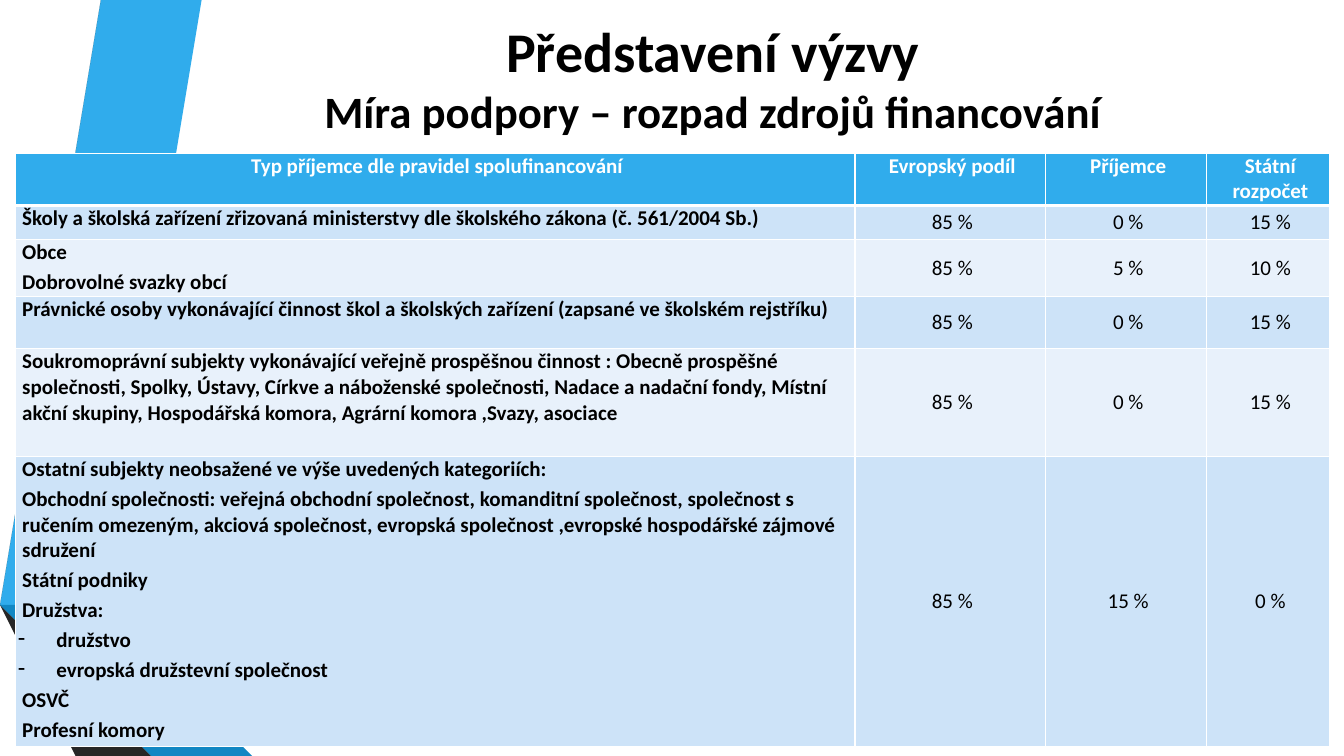
from dataclasses import dataclass

import lxml.etree
import pptx
import pptx.dml.color
import pptx.enum.text
import pptx.oxml
import pptx.oxml.ns
import pptx.slide
import pptx.table
import pptx.util

COLORS = {
    "blue": "30ACEC", "blue_mid": "1287C3", "blue_dark": "0C5A82",
    "gray": "595959", "gray_mid": "404040", "gray_dark": "262626",
    "band_dark": "CDE3F8", "band_light": "E8F1FB",
    "black": "000000", "white": "FFFFFF",
}
FONT = "Calibri"
Inches = pptx.util.Inches
Pt = pptx.util.Pt
ALIGN = pptx.enum.text.PP_ALIGN
ANCHOR = pptx.enum.text.MSO_ANCHOR


@dataclass
class Ribbon:
    color: str
    points: list[tuple[float, float]]


@dataclass
class Recipient:
    height: float
    lines: list[str]
    shares: tuple[str, str, str]


RIBBONS = [
    Ribbon("blue", [(0.5, 5.78), (0.77, 5.83), (1.73, 0), (1.45, 0)]),
    Ribbon("gray", [(1.39, 0), (1.11, 0), (0.16, 5.73), (0.44, 5.77)]),
    Ribbon("gray_dark", [(0.16, 5.73), (1.45, 7.5), (1.51, 7.5)]),
    Ribbon("blue_dark", [(0.5, 5.79), (2.08, 7.5), (2.14, 7.5)]),
    Ribbon("blue_mid", [(0.5, 5.79), (2.14, 7.5), (2.83, 7.5), (0.77, 5.83), (0.5, 5.78)]),
    Ribbon("gray_mid", [(2.02, 7.5), (0.48, 5.83), (0.44, 5.77), (0.16, 5.73), (1.51, 7.5)]),
]

TITLE_LINES = [("Představení výzvy", 40), ("Míra podpory – rozpad zdrojů financování", 32)]

COLUMNS = [
    ("Typ příjemce dle pravidel spolufinancování", 8.33),
    ("Evropský podíl", 1.89),
    ("Příjemce", 1.6),
    ("Státní rozpočet", 1.22),
]
HEADER_HEIGHT = 0.52
BULLET = "- "

RECIPIENTS = [
    Recipient(0.34, ["Školy a školská zařízení zřizovaná ministerstvy dle školského zákona "
                     "(č. 561/2004 Sb.)"], ("85 %", "0 %", "15 %")),
    Recipient(0.56, ["Obce", "Dobrovolné svazky obcí"], ("85 %", "5 %", "10 %")),
    Recipient(0.52, ["Právnické osoby vykonávající činnost škol a školských zařízení "
                     "(zapsané ve školském rejstříku)"], ("85 %", "0 %", "15 %")),
    Recipient(1.07, ["Soukromoprávní subjekty vykonávající veřejně prospěšnou činnost : "
                     "Obecně prospěšné společnosti, Spolky, Ústavy, Církve a náboženské "
                     "společnosti, Nadace a nadační fondy, Místní akční skupiny, "
                     "Hospodářská komora, Agrární komora ,Svazy, asociace"],
              ("85 %", "0 %", "15 %")),
    Recipient(2.88, ["Ostatní subjekty neobsažené ve výše uvedených kategoriích:",
                     "Obchodní společnosti: veřejná obchodní společnost, komanditní "
                     "společnost, společnost s ručením omezeným, akciová společnost, "
                     "evropská společnost ,evropské hospodářské zájmové sdružení",
                     "Státní podniky", "Družstva:",
                     BULLET + "družstvo", BULLET + "evropská družstevní společnost",
                     "OSVČ", "Profesní komory"], ("85 %", "15 %", "0 %")),
]


def rgb(name: str) -> pptx.dml.color.RGBColor:
    return pptx.dml.color.RGBColor.from_string(COLORS[name])


def draw_ribbon(slide: pptx.slide.Slide, ribbon: Ribbon) -> None:
    start, *rest = ribbon.points
    builder = slide.shapes.build_freeform(*start, scale=Inches(1))
    builder.add_line_segments(rest, close=True)
    stripe = builder.convert_to_shape()
    stripe.shadow.inherit = False
    stripe.fill.solid()
    stripe.fill.fore_color.rgb = rgb(ribbon.color)
    stripe.line.fill.background()


def format_run(run, size: float, color: str, bold: bool) -> None:
    run.font.name = FONT
    run.font.size = Pt(size)
    run.font.bold = bold
    run.font.color.rgb = rgb(color)


def draw_title(slide: pptx.slide.Slide) -> None:
    title = slide.shapes.title
    title.left, title.top = Inches(1.59), Inches(0)
    title.width, title.height = Inches(10.96), Inches(1.52)
    frame = title.text_frame
    frame.auto_size = pptx.enum.text.MSO_AUTO_SIZE.NONE
    frame.word_wrap = True
    frame.vertical_anchor = ANCHOR.MIDDLE
    # A vertical tab becomes a line break inside the paragraph
    frame.text = "\v".join(text for text, _ in TITLE_LINES)
    heading = frame.paragraphs[0]
    heading.alignment = ALIGN.CENTER
    for run, (_, size) in zip(heading.runs, TITLE_LINES):
        format_run(run, size, "black", True)


def set_borders(cell: pptx.table._Cell, top: float, bottom: float) -> None:
    properties = cell._tc.get_or_add_tcPr()
    for side, width in (("L", 1), ("R", 1), ("T", top), ("B", bottom)):
        properties.append(pptx.oxml.parse_xml(
            f'<a:ln{side} {pptx.oxml.ns.nsdecls("a")} w="{Pt(width)}"><a:solidFill>'
            f'<a:srgbClr val="{COLORS["white"]}"/></a:solidFill></a:ln{side}>'))


def fill_cell(cell: pptx.table._Cell, lines: list[str], fill: str, color: str,
              bold: bool, centered: bool, anchor: ANCHOR) -> None:
    cell.margin_left = cell.margin_right = Inches(0.03)
    cell.margin_top = cell.margin_bottom = 0
    cell.vertical_anchor = anchor
    cell.fill.solid()
    cell.fill.fore_color.rgb = rgb(fill)
    cell.text_frame.text = "\n".join(line.removeprefix(BULLET) for line in lines)
    for paragraph, line in zip(cell.text_frame.paragraphs, lines):
        paragraph.alignment = ALIGN.CENTER if centered else ALIGN.LEFT
        paragraph.space_before = Pt(3)
        bulleted = line.startswith(BULLET)
        layout = paragraph._p.get_or_add_pPr()
        layout.set("marL", str(Inches(0.38 if bulleted else 0.04)))
        layout.set("indent", str(Inches(-0.38 if bulleted else 0)))
        if bulleted:
            mark = lxml.etree.SubElement(layout, pptx.oxml.ns.qn("a:buChar"))
            mark.set("char", BULLET.strip())
        for run in paragraph.runs:
            format_run(run, 15, color, bold)


def draw_funding_table(slide: pptx.slide.Slide) -> None:
    heights = [HEADER_HEIGHT] + [recipient.height for recipient in RECIPIENTS]
    widths = [width for _, width in COLUMNS]
    funding = slide.shapes.add_table(
        len(heights), len(widths), Inches(0.15), Inches(1.52),
        Inches(sum(widths)), Inches(sum(heights))).table
    for column, width in zip(funding.columns, widths):
        column.width = Inches(width)
    for row, height in zip(funding.rows, heights):
        row.height = Inches(height)

    # Header row
    for cell, (label, _) in zip(funding.rows[0].cells, COLUMNS):
        set_borders(cell, 1, 3)
        fill_cell(cell, [label], "blue", "white", True, True, ANCHOR.TOP)

    # Recipient rows in alternating bands
    for index, recipient in enumerate(RECIPIENTS):
        band = "band_light" if index % 2 else "band_dark"
        name_cell, *share_cells = funding.rows[index + 1].cells
        for cell in (name_cell, *share_cells):
            set_borders(cell, 1 if index else 3, 1)
        fill_cell(name_cell, recipient.lines, band, "black", True, False, ANCHOR.TOP)
        for cell, share in zip(share_cells, recipient.shares):
            fill_cell(cell, [share], band, "black", False, True, ANCHOR.MIDDLE)


def main() -> None:
    deck = pptx.Presentation()
    deck.slide_width, deck.slide_height = Inches(13.33), Inches(7.5)
    slide = deck.slides.add_slide(deck.slide_layouts.get_by_name("Title Only"))
    for ribbon in RIBBONS:
        draw_ribbon(slide, ribbon)
    draw_title(slide)
    draw_funding_table(slide)
    deck.save("out.pptx")


if __name__ == "__main__":
    main()
